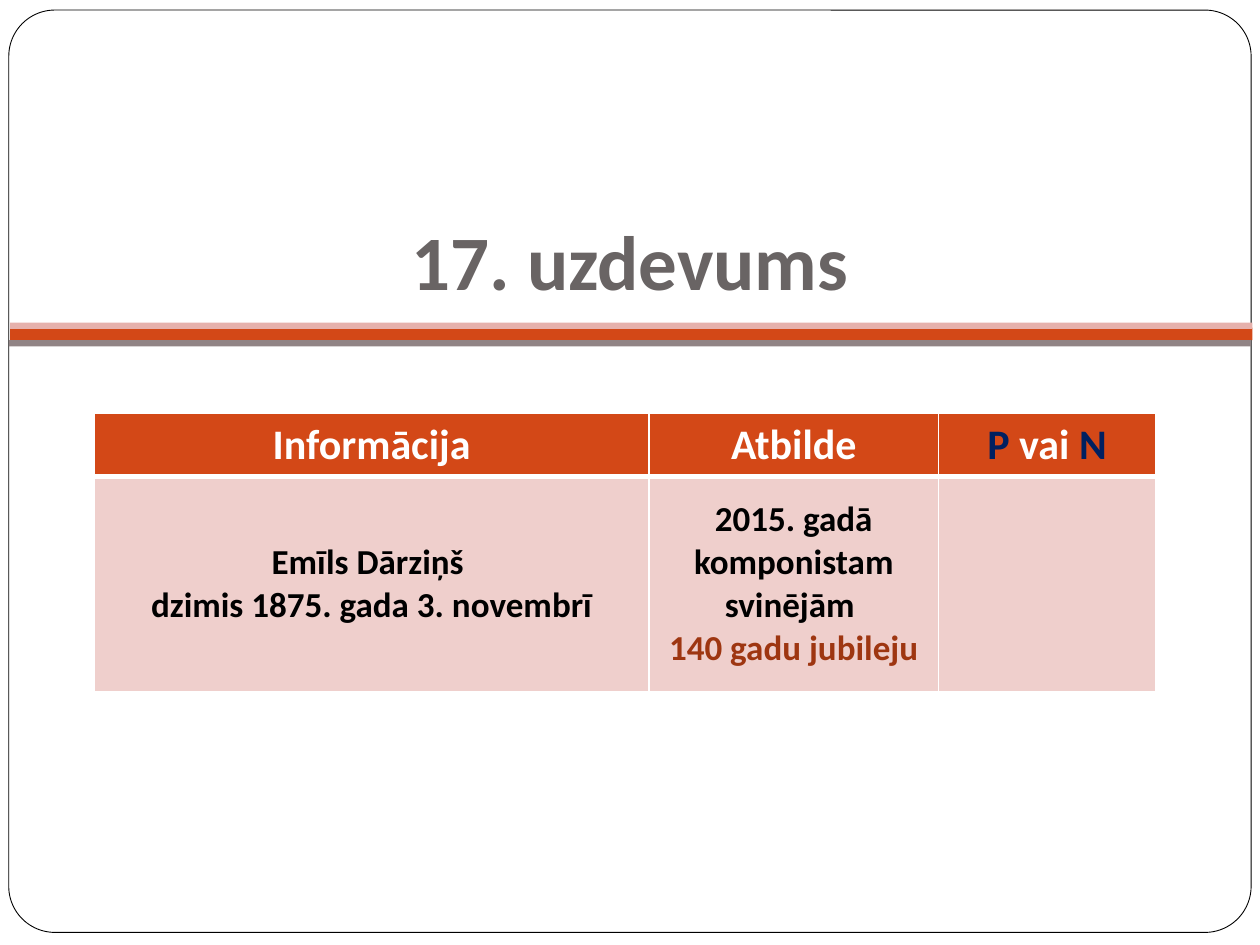
from pptx import Presentation
from pptx.dml.color import RGBColor
from pptx.enum.shapes import MSO_SHAPE
from pptx.enum.text import MSO_ANCHOR, PP_ALIGN
from pptx.oxml.ns import qn
from pptx.util import Inches, Pt
from lxml import etree

RECT, ROUND = MSO_SHAPE.RECTANGLE, MSO_SHAPE.ROUNDED_RECTANGLE
CENTER = PP_ALIGN.CENTER
MIDDLE, BOTTOM = MSO_ANCHOR.MIDDLE, MSO_ANCHOR.BOTTOM

COLORS = {
    "white": "FFFFFF", "black": "000000", "orange": "D34817",
    "pink": "E6B1AC", "gray": "918485", "title": "696464",
    "navy": "002060", "rust": "9E3611", "body": "EFCFCC",
}
BANDS = [
    (0.08, 2.6, 0.1, "orange"),
    (0.08, 2.56, 0.05, "pink"),
    (0.07, 2.7, 0.05, "gray"),
]
COLUMNS = [4.4, 2.3, 1.72]
HEADER = [
    [[("Informācija", "white")]],
    [[("Atbilde", "white")]],
    [[("P ", "navy"), ("vai ", "white"), ("N", "navy")]],
]
BODY = [
    [[("Emīls Dārziņš ", "black")],
     [("dzimis 1875. gada 3. novembrī", "black")]],
    [[("2015. gadā komponistam svinējām ", "black")],
     [("140 gadu jubileju", "rust")]],
    [],
]
ROWS = [
    {"height": 0.5, "cells": HEADER, "size": 24, "fill": "orange", "bottom": 3},
    {"height": 1.71, "cells": BODY, "size": 20, "fill": "body", "bottom": 1},
]


def color(name):
    return RGBColor.from_string(COLORS[name])


def add_panel(s, kind, left, top, width, height, fill):
    sp = s.shapes.add_shape(kind, Inches(left), Inches(top), Inches(width), Inches(height))
    sp.shadow.inherit = False
    sp.fill.solid()
    sp.fill.fore_color.rgb = color(fill)
    sp.line.fill.background()
    return sp


def write_text(tf, paragraphs, size):
    for i, runs in enumerate(paragraphs):
        p = tf.add_paragraph() if i else tf.paragraphs[0]
        p.alignment = CENTER
        for text, name in runs:
            r = p.add_run()
            r.text = text
            for key, value in {"name": "Calibri", "size": Pt(size), "bold": True}.items():
                setattr(r.font, key, value)
            r.font.color.rgb = color(name)


def add_title(s, text):
    sp = s.shapes.add_textbox(Inches(0.04), Inches(1.04), Inches(9.92), Inches(1.49))
    tf = sp.text_frame
    layout = {"word_wrap": True, "vertical_anchor": BOTTOM, "margin_bottom": Inches(0.1)}
    for key, value in layout.items():
        setattr(tf, key, value)
    write_text(tf, [[(text, "title")]], 44)


def set_borders(cell, widths):
    tc_pr = cell._tc.get_or_add_tcPr()
    for tag, width in widths.items():
        ln = etree.SubElement(tc_pr, qn(f"a:{tag}"), w=str(Pt(width)))
        fill = etree.SubElement(ln, qn("a:solidFill"))
        etree.SubElement(fill, qn("a:srgbClr"), val=COLORS["white"])


def add_answer_table(s):
    height = sum(row["height"] for row in ROWS)
    table = s.shapes.add_table(len(ROWS), len(COLUMNS), Inches(0.75), Inches(3.28),
                               Inches(sum(COLUMNS)), Inches(height)).table
    for column, width in zip(table.columns, COLUMNS):
        column.width = Inches(width)
    top = 1
    for i, row in enumerate(ROWS):
        table.rows[i].height = Inches(row["height"])
        for j, paragraphs in enumerate(row["cells"]):
            cell = table.cell(i, j)
            set_borders(cell, {"lnL": 1, "lnR": 1, "lnT": top, "lnB": row["bottom"]})
            cell.fill.solid()
            cell.fill.fore_color.rgb = color(row["fill"])
            cell.vertical_anchor = MIDDLE
            write_text(cell.text_frame, paragraphs, row["size"])
        top = row["bottom"]


def main():
    prs = Presentation()
    prs.slide_width, prs.slide_height = Inches(10), Inches(7.5)
    s = prs.slides.add_slide(prs.slide_layouts[6])
    frame = add_panel(s, ROUND, 0.07, 0.08, 9.86, 7.32, "white")
    frame.adjustments[0] = 0.05
    frame.line.color.rgb = color("black")
    frame.line.width = Pt(0.5)
    for left, top, height, fill in BANDS:
        add_panel(s, RECT, left, top, 9.86, height, fill)
    add_title(s, "17. uzdevums")
    add_answer_table(s)
    prs.save("out.pptx")


if __name__ == "__main__":
    main()
